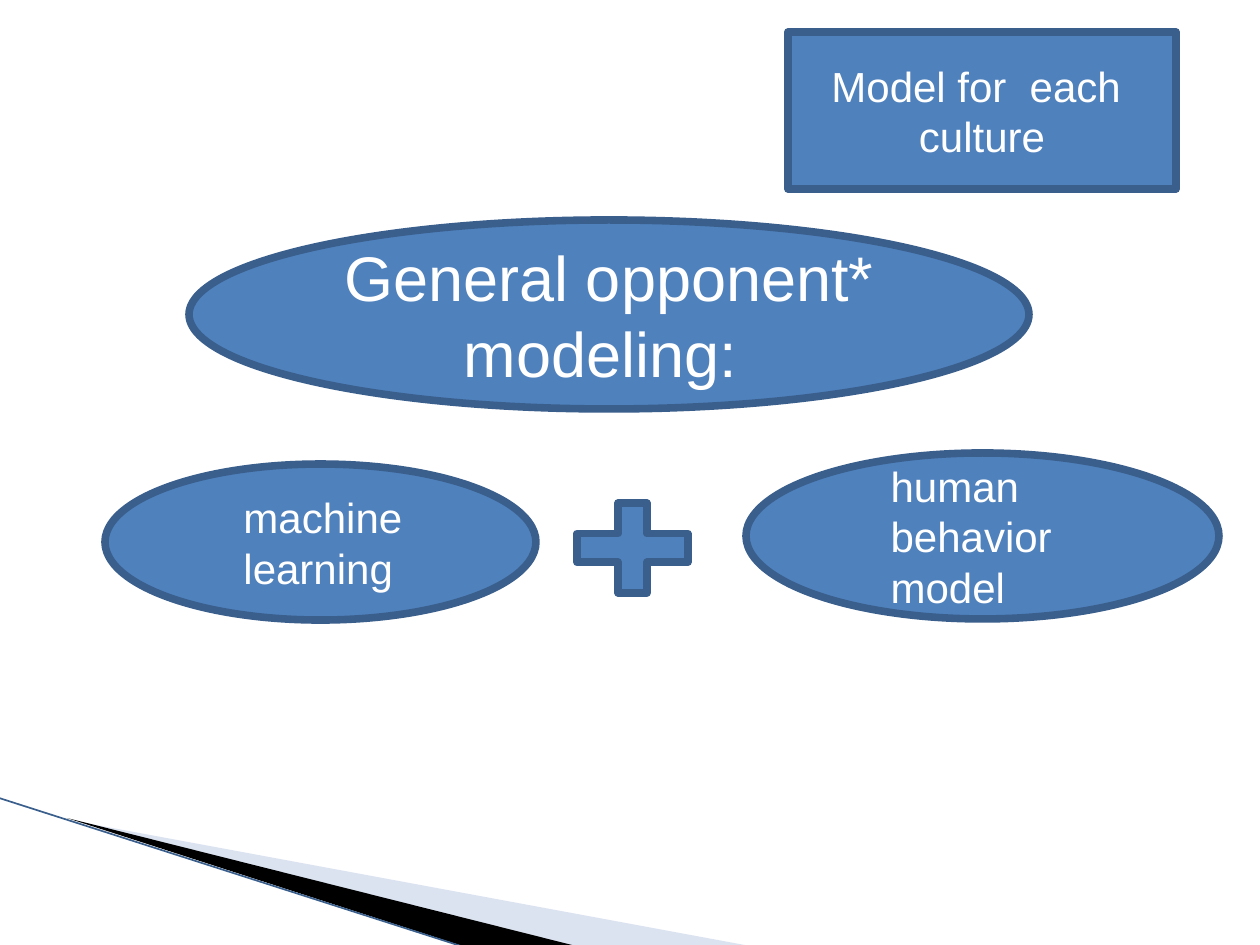
from pptx import Presentation
from pptx.dml.color import RGBColor
from pptx.enum.shapes import MSO_CONNECTOR, MSO_SHAPE
from pptx.enum.text import MSO_ANCHOR, PP_ALIGN
from pptx.oxml.ns import qn
from pptx.util import Inches, Pt
from lxml import etree

PX = 914400 / 126
OVAL, RECT, PLUS = MSO_SHAPE.OVAL, MSO_SHAPE.RECTANGLE, MSO_SHAPE.MATH_PLUS
STRAIGHT = MSO_CONNECTOR.STRAIGHT
MIDDLE = MSO_ANCHOR.MIDDLE
CENTER, LEFT = PP_ALIGN.CENTER, PP_ALIGN.LEFT
COLORS = {"blue": "4F81BD", "outline": "3A5F8C", "pale": "A7B9DB",
          "black": "000000", "white": "FFFFFF"}


def rgb(name):
    return RGBColor.from_string(COLORS[name])


def emu(*lengths):
    return [round(n * PX) for n in lengths]


def add_wedge(slide, points, color, opacity=100):
    """Draw a borderless polygon; opacity is a percentage."""
    builder = slide.shapes.build_freeform(*points[0], scale=PX)
    builder.add_line_segments(points[1:], close=True)
    sp = builder.convert_to_shape()
    sp.shadow.inherit = False
    sp.fill.solid()
    sp.fill.fore_color.rgb = rgb(color)
    sp.line.fill.background()
    if opacity < 100:
        clr = sp.fill._xPr.find(qn("a:solidFill"))[0]
        etree.SubElement(clr, qn("a:alpha")).set("val", str(opacity * 1000))


def add_edge(slide, *ends):
    line = slide.shapes.add_connector(STRAIGHT, *emu(*ends))
    line.line.color.rgb = rgb("outline")
    line.line.width = Pt(0.95)
    etree.SubElement(line._element.spPr, qn("a:effectLst"))


def add_block(slide, kind, box):
    sp = slide.shapes.add_shape(kind, *emu(*box))
    sp.shadow.inherit = False
    sp.fill.solid()
    sp.fill.fore_color.rgb = rgb("blue")
    sp.line.color.rgb = rgb("outline")
    sp.line.width = Pt(4.33)
    return sp


def add_label(sp, text, size=24, align=CENTER, level=0):
    tf = sp.text_frame
    tf.word_wrap = True
    tf.vertical_anchor = MIDDLE
    p = tf.paragraphs[0]
    p.alignment, p.level = align, level
    if level:
        pPr = p._p.get_or_add_pPr()
        pPr.set("marL", str(Inches(0.5) * level))
        pPr.set("indent", "0")
    r = p.add_run()
    r.text = text
    for name, value in {"name": "Arial", "size": Pt(size)}.items():
        setattr(r.font, name, value)
    r.font.color.rgb = rgb("white")


def main():
    prs = Presentation()
    prs.slide_width, prs.slide_height = Inches(10), Inches(7.5)
    slide = prs.slides.add_slide(prs.slide_layouts[6])

    add_wedge(slide, [(69, 820), (750, 946), (575, 946)], "pale", 40)
    add_wedge(slide, [(67, 818), (576, 946), (469, 948)], "black")
    add_edge(slide, -1, 798, 467, 948)

    general = add_block(slide, OVAL, (189, 220, 840, 189))
    add_label(general, "General opponent* modeling: ", size=36)
    parts = [("machine learning", (105, 464, 431, 156)),
             ("human behavior model", (746, 453, 473, 166))]
    for text, box in parts:
        add_label(add_block(slide, OVAL, box), text, align=LEFT, level=1)
    add_block(slide, PLUS, (557, 487, 151, 122))
    culture = add_block(slide, RECT, (788, 32, 388, 157))
    add_label(culture, "Model for  each  culture")

    prs.save("out.pptx")


if __name__ == "__main__":
    main()
